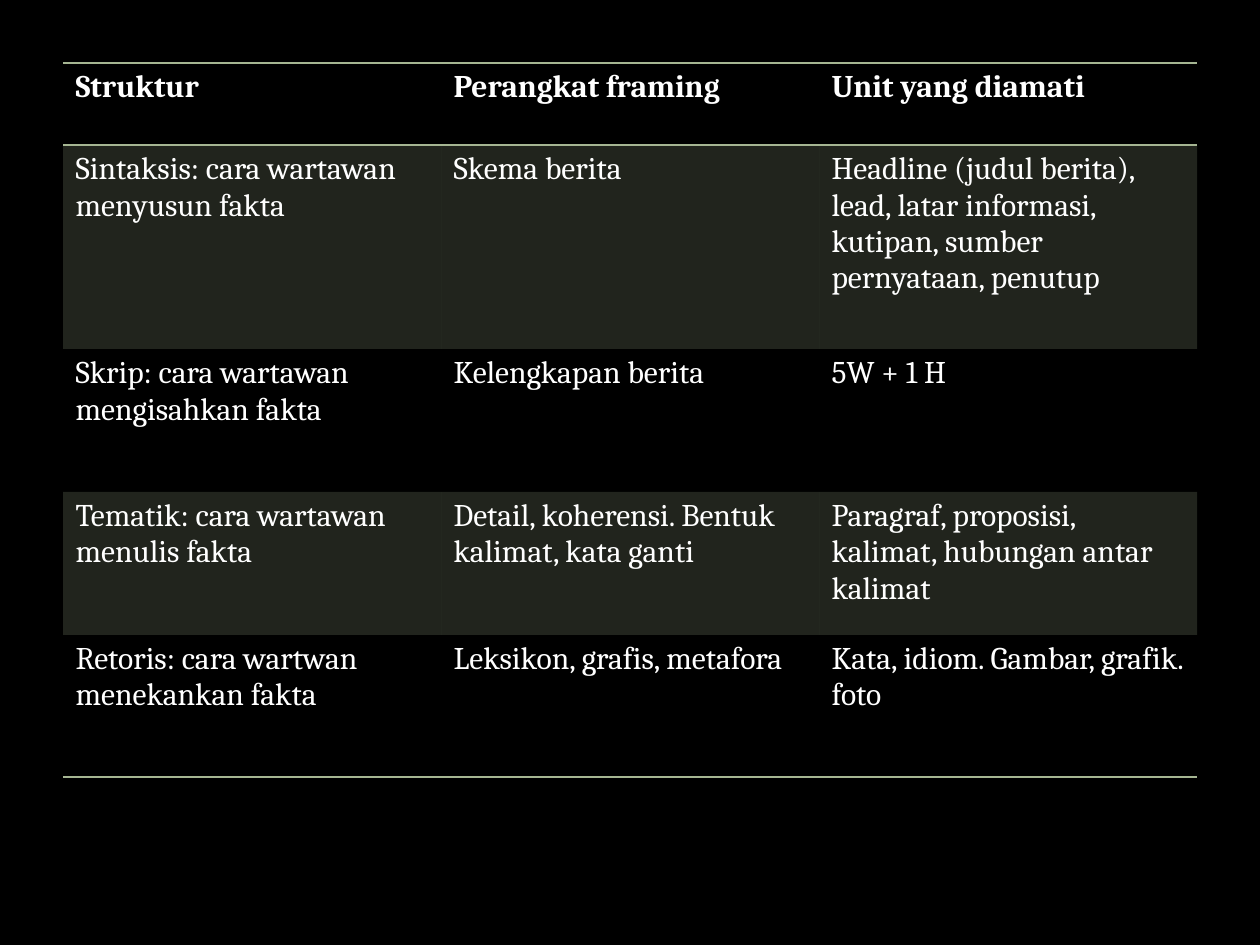
from pptx import Presentation
from pptx.dml.color import RGBColor
from pptx.oxml import parse_xml
from pptx.oxml.ns import nsdecls, qn
from pptx.util import Pt

PX = 914400 / 126
THEME = {
    "back": "000000",
    "text": "FFFFFF",
    "sage": "A5B592",
    "font": "Cambria",
    "size": 18,
    "rule": 1,
    "alpha": 20,
}
PLAIN = "{2D5ABB26-0587-4C30-8999-92F81FD0307C}"  # no style, no grid


def px(n):
    return round(n * PX)


def add_rule(cell, side):
    """Draw the top (lnT) or bottom (lnB) border of a cell."""
    line = parse_xml(
        f'<a:{side} {nsdecls("a")} w="{Pt(THEME["rule"])}"><a:solidFill>'
        f'<a:srgbClr val="{THEME["sage"]}"/></a:solidFill></a:{side}>'
    )
    cell._tc.get_or_add_tcPr().insert(0, line)


# Slide
deck = Presentation()
deck.slide_width, deck.slide_height = px(1260), px(945)
slide = deck.slides.add_slide(deck.slide_layouts[6])
slide.background.fill.solid()
slide.background.fill.fore_color.rgb = RGBColor.from_string(THEME["back"])

# Content
rows = [
    ["Struktur", "Perangkat framing", "Unit yang diamati"],
    ["Sintaksis: cara wartawan menyusun fakta", "Skema berita",
     "Headline (judul berita), lead, latar informasi, kutipan, "
     "sumber pernyataan, penutup"],
    ["Skrip: cara wartawan mengisahkan fakta", "Kelengkapan berita",
     "5W + 1 H"],
    ["Tematik: cara wartawan menulis fakta",
     "Detail, koherensi. Bentuk kalimat, kata ganti",
     "Paragraf, proposisi, kalimat, hubungan antar kalimat"],
    ["Retoris: cara wartwan menekankan fakta",
     "Leksikon, grafis, metafora", "Kata, idiom. Gambar, grafik. foto"],
]
heights = [82, 204, 143, 143, 142]

# Table
frame = slide.shapes.add_table(
    len(rows), 3, px(63), px(63), px(1134), px(sum(heights)))
table = frame.table
table.horz_banding = False
table._tbl.tblPr.find(qn("a:tableStyleId")).text = PLAIN
for col in table.columns:
    col.width = px(378)

# Cells
last = len(rows) - 1
for r, (texts, high) in enumerate(zip(rows, heights)):
    table.rows[r].height = px(high)
    for c, text in enumerate(texts):
        cell = table.cell(r, c)
        cell.text_frame.text = text
        font = cell.text_frame.paragraphs[0].runs[0].font
        font.name, font.size = THEME["font"], Pt(THEME["size"])
        font.bold = r == 0
        font.color.rgb = RGBColor.from_string(THEME["text"])

        # Odd rows carry a translucent band
        if r % 2:
            cell.fill.solid()
            cell.fill.fore_color.rgb = RGBColor.from_string(THEME["sage"])
            tint = cell._tc.tcPr.find(".//" + qn("a:srgbClr"))
            tint.append(parse_xml(
                f'<a:alpha {nsdecls("a")} val="{THEME["alpha"] * 1000}"/>'))
        else:
            cell.fill.background()

        # Rules around the header and under the last row
        if r in (0, last):
            add_rule(cell, "lnB")
        if r == 0:
            add_rule(cell, "lnT")

deck.save("out.pptx")
